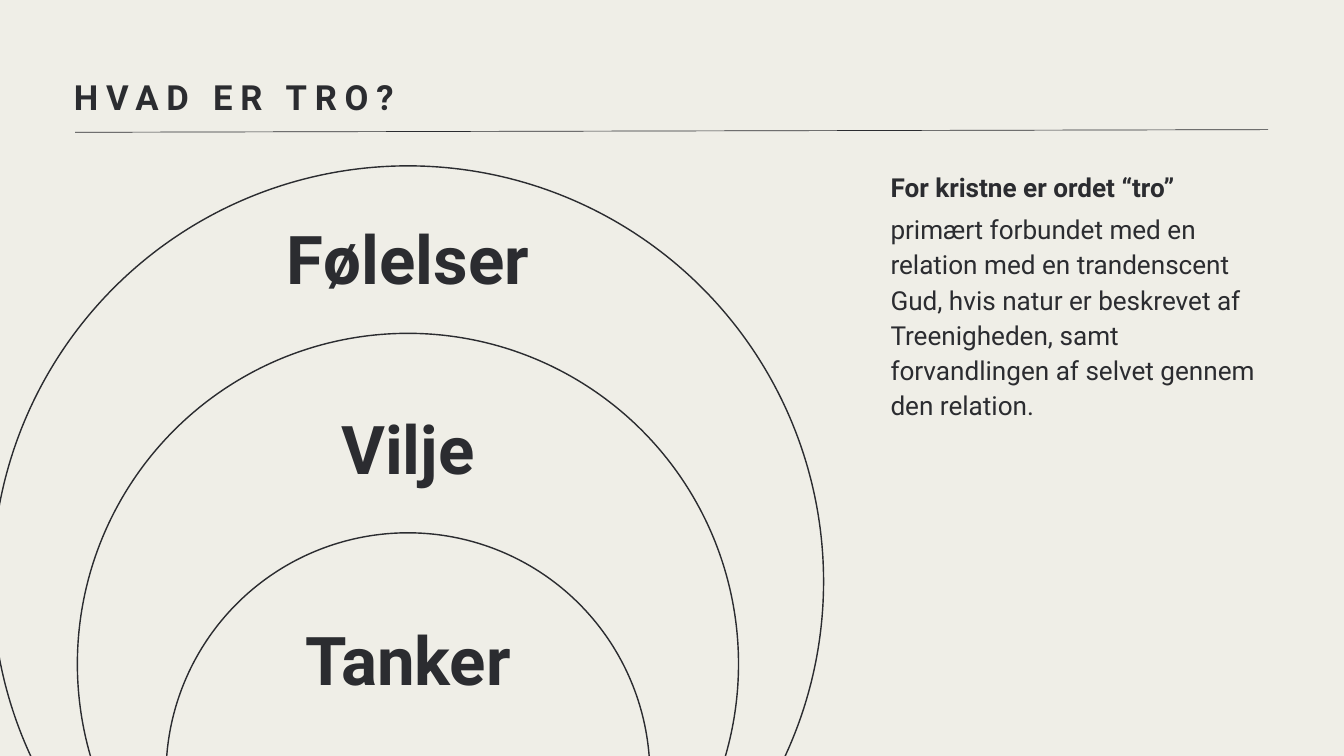
from dataclasses import dataclass

from lxml.etree import SubElement
from pptx import Presentation
from pptx.dml.color import RGBColor
from pptx.enum.shapes import MSO_CONNECTOR, MSO_SHAPE
from pptx.enum.text import MSO_ANCHOR, MSO_AUTO_SIZE, PP_ALIGN
from pptx.oxml.ns import qn
from pptx.shapes.autoshape import Shape
from pptx.slide import Slide
from pptx.util import Cm, Pt

INK = "2B2C30"
PAPER = "EFEEE7"
FONT = "Roboto"
CENTER = 15.42


@dataclass
class Ring:
    top: float
    diameter: float


@dataclass
class TextBlock:
    text: str
    left: float
    top: float
    width: float
    height: float
    size: float
    line_spacing: float
    bold: bool = True
    alignment: PP_ALIGN = PP_ALIGN.LEFT
    letter_spacing: float = 0


def ring_label(text: str, top: float, width: float) -> TextBlock:
    return TextBlock(text, CENTER - width / 2, top, width, 3.84, 72, 115.2,
                     alignment=PP_ALIGN.CENTER)


TITLE = TextBlock("HVAD ER TRO?", 2.79, 2.62, 45.09, 1.8, 37.1, 52, letter_spacing=8.4)
RINGS = [Ring(6.27, 31.42), Ring(12.6, 24.99), Ring(20.14, 18.29)]
TEXT_BLOCKS = [
    ring_label("Vilje", 14.38, 14.22),
    ring_label("Tanker", 22.35, 16.26),
    ring_label("Følelser", 7.21, 14.22),
    TextBlock("For kristne er ordet “tro”", 33.66, 6.27, 14.3, 1.32, 28, 39.2),
    TextBlock(
        "primært forbundet med en relation med en trandenscent Gud, hvis natur "
        "er beskrevet af Treenigheden, samt forvandlingen af selvet gennem den relation.",
        33.66, 7.92, 14.3, 10.72, 28, 37.8, bold=False),
]


def color(value: str) -> RGBColor:
    return RGBColor.from_string(value)


def write_text(shape: Shape, block: TextBlock) -> None:
    shape.left, shape.top = Cm(block.left), Cm(block.top)
    shape.width, shape.height = Cm(block.width), Cm(block.height)
    frame = shape.text_frame
    frame.word_wrap = True
    frame.auto_size = MSO_AUTO_SIZE.NONE
    frame.vertical_anchor = MSO_ANCHOR.TOP
    frame.margin_left = frame.margin_right = 0
    frame.margin_top = frame.margin_bottom = 0
    paragraph = frame.paragraphs[0]
    paragraph.alignment = block.alignment
    paragraph.line_spacing = Pt(block.line_spacing)
    paragraph.space_before = Pt(0)
    run = paragraph.add_run()
    run.text = block.text
    run.font.name = FONT
    run.font.size = Pt(block.size)
    run.font.bold = block.bold
    run.font.color.rgb = color(INK)
    if block.letter_spacing:
        run.font._element.set("spc", str(round(block.letter_spacing * 100)))


def add_text(slide: Slide, block: TextBlock) -> None:
    write_text(slide.shapes.add_textbox(0, 0, 0, 0), block)


def add_ring(slide: Slide, ring: Ring) -> None:
    diameter = Cm(ring.diameter)
    shape = slide.shapes.add_shape(
        MSO_SHAPE.OVAL, Cm(CENTER - ring.diameter / 2), Cm(ring.top), diameter, diameter)
    shape.shadow.inherit = False
    shape.fill.background()
    shape.line.color.rgb = color(INK)
    shape.line.width = Pt(1.5)


def add_rule(slide: Slide) -> None:
    connector = slide.shapes.add_connector(
        MSO_CONNECTOR.STRAIGHT, Cm(2.84), Cm(5), Cm(47.93), Cm(4.9))
    connector.line.color.rgb = color(INK)
    connector.line.width = Pt(0.75)
    SubElement(connector._element.spPr, qn("a:effectLst"))


def main() -> None:
    presentation = Presentation()
    presentation.slide_width, presentation.slide_height = Cm(50.8), Cm(28.575)
    slide = presentation.slides.add_slide(presentation.slide_layouts[5])
    slide.background.fill.solid()
    slide.background.fill.fore_color.rgb = color(PAPER)
    write_text(slide.shapes.title, TITLE)
    add_rule(slide)
    for ring in RINGS:
        add_ring(slide, ring)
    for block in TEXT_BLOCKS:
        add_text(slide, block)
    presentation.save("out.pptx")


if __name__ == "__main__":
    main()
